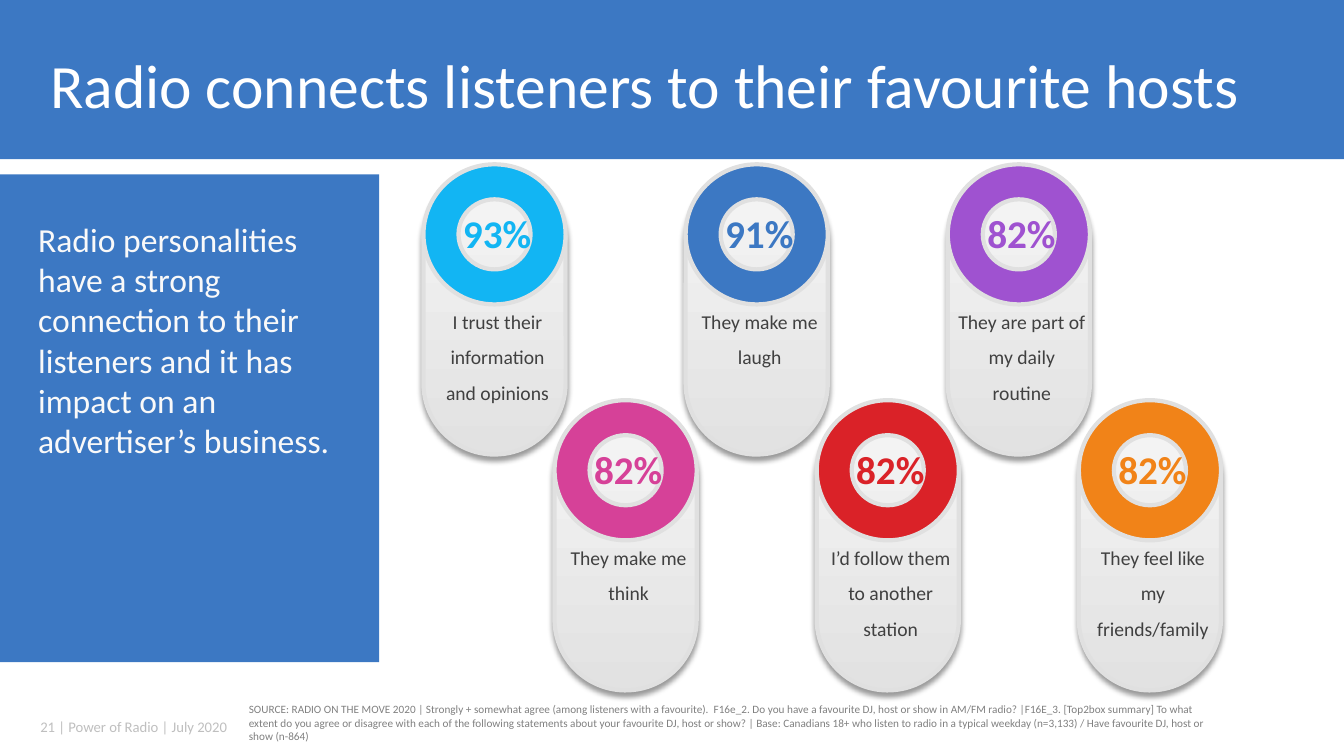
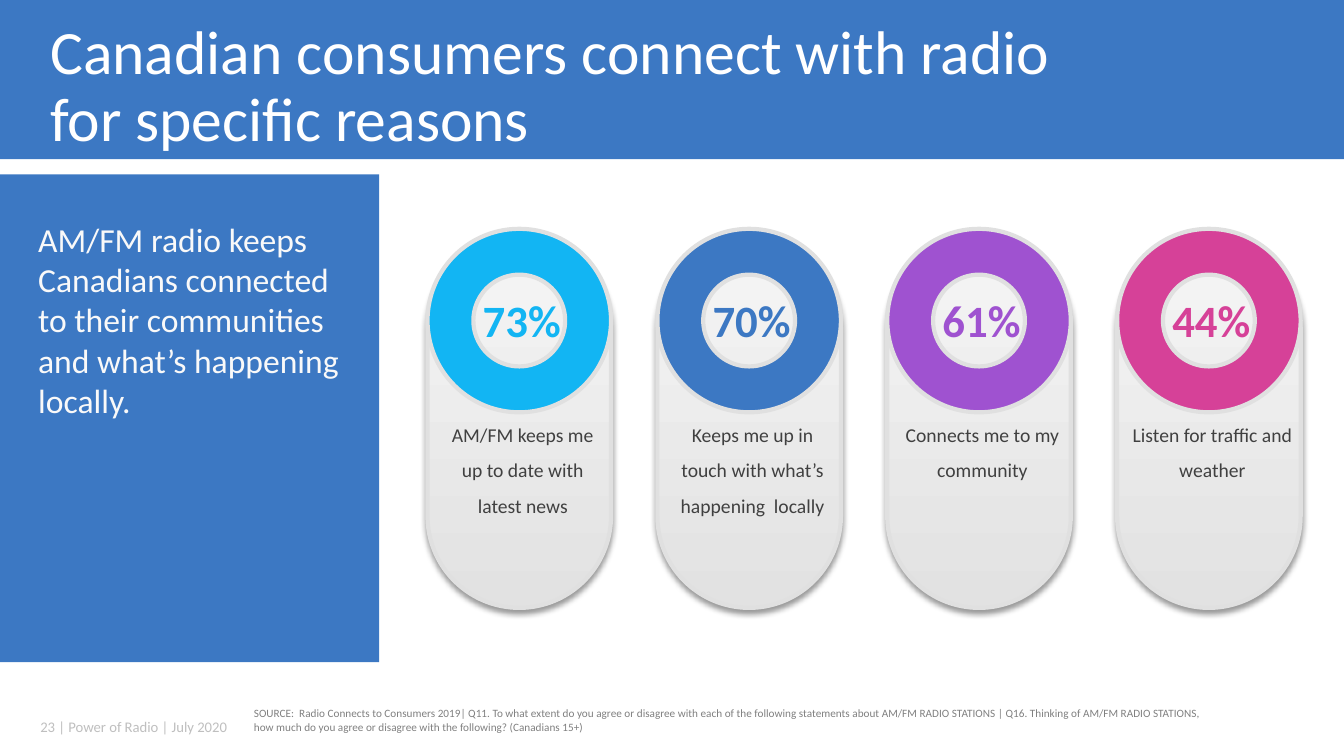
from lxml.etree import SubElement as Sub
from pptx import Presentation
from pptx.dml.color import RGBColor as RGB
from pptx.enum.shapes import MSO_SHAPE as Kind
from pptx.enum.text import MSO_ANCHOR as Anchor, PP_ALIGN as Align
from pptx.oxml.ns import qn
from pptx.util import Pt

PX = 9144  # EMU in one px, at 100 px to the inch
FONT = "Calibri"
HUE = {
    "blue": "3C78C3", "sky": "12B5F3", "pink": "D64198", "red": "DA2228",
    "plum": "9F52D0", "gold": "F18318", "rim": "E0E0E0", "low": "E2E2E2",
    "high": "F5F5F5", "white": "FFFFFF", "pale": "F9F9F9", "ink": "404040",
    "grey": "808080", "mist": "BFBFBF", "black": "000000",
}

DECK = [
    {
        "title": "Radio connects listeners to their favourite hosts",
        "side": "Radio personalities have a strong connection to their listeners "
                "and it has impact on an advertiser’s business.",
        "page": "21 | Power of Radio | July 2020",
        "source": "SOURCE: RADIO ON THE MOVE 2020 | Strongly + somewhat agree (among "
                  "listeners with a favourite).  F16e_2. Do you have a favourite DJ, host "
                  "or show in AM/FM radio? |F16E_3. [Top2box summary] To what extent do "
                  "you agree or disagree with each of the following statements about your "
                  "favourite DJ, host or show? | Base: Canadians 18+ who listen to radio "
                  "in a typical weekday (n=3,133) / Have favourite DJ, host or show (n-864)",
        "source_box": (237, 692, 973, 58),
        # first pill, step to the next, drop of every second pill
        "start": (420, 163), "step": 130, "drop": 234,
        # boxes measured from the pill's corner
        "pill": (0, 5, 141, 283), "ring": (0, 0, 141, 139),
        "share": (39, 45, 68, 47), "label": (10, 133, 127, 102), "size": 28,
        "items": [
            ("93%", "sky", "I trust their information and opinions"),
            ("82%", "pink", "They make me think"),
            ("91%", "blue", "They make me laugh"),
            ("82%", "red", "I’d follow them to another station"),
            ("82%", "plum", "They are part of my daily routine"),
            ("82%", "gold", "They feel like my friends/family"),
        ],
    },
    {
        "title": "Canadian consumers connect with radio\vfor specific reasons",
        "side": "AM/FM radio keeps Canadians connected to their communities "
                "and what’s happening locally.",
        "page": "23 | Power of Radio | July 2020",
        "source": "SOURCE:  Radio Connects to Consumers 2019| Q11. To what extent do you "
                  "agree or disagree with each of the following statements about AM/FM "
                  "RADIO STATIONS | Q16. Thinking of AM/FM RADIO STATIONS,\n"
                  "how much do you agree or disagree with the following? (Canadians 15+)",
        "source_box": (242, 696, 1070, 50),
        "start": (424, 227), "step": 228, "drop": 0,
        "pill": (0, 7, 182, 369), "ring": (0, 0, 182, 182),
        "share": (50, 63, 87, 54), "label": (13, 181, 163, 102), "size": 32,
        "items": [
            ("73%", "sky", "AM/FM keeps me up to date with latest news"),
            ("70%", "blue", "Keeps me up in touch with what’s happening  locally"),
            ("61%", "plum", "Connects me to my community"),
            ("44%", "pink", "Listen for traffic and weather"),
        ],
    },
]


def draw(kind, box, hue, rim=False):
    shape = slide.shapes.add_shape(kind, *[n * PX for n in box])
    shape.shadow.inherit = False
    shape.fill.solid()
    shape.fill.fore_color.rgb = RGB.from_string(HUE[hue])
    if rim:
        shape.line.color.rgb = RGB.from_string(HUE["rim"])
        shape.line.width = Pt(3)
    else:
        shape.line.fill.background()
    return shape


def write(words, box, size, hue, inset=(10, 5), anchor=Anchor.TOP,
          align=Align.LEFT, space=None, bold=False):
    frame = slide.shapes.add_textbox(*[n * PX for n in box]).text_frame
    frame.word_wrap = True
    frame.vertical_anchor = anchor
    frame.margin_left = frame.margin_right = inset[0] * PX
    frame.margin_top = frame.margin_bottom = inset[1] * PX
    frame.text = words
    for para in frame.paragraphs:
        para.alignment = align
        para.line_spacing = space
        para.font.name = FONT
        para.font.size = Pt(size)
        para.font.bold = bold
        para.font.color.rgb = RGB.from_string(HUE[hue])


deck = Presentation()
deck.slide_width, deck.slide_height = 1333 * PX, 750 * PX

for page in DECK:
    slide = deck.slides.add_slide(deck.slide_layouts[6])

    # Title band, side panel and footer
    draw(Kind.RECTANGLE, (0, 0, 1333, 158), "blue")
    write(page["title"], (40, 15, 1250, 145), 44, "white",
          anchor=Anchor.MIDDLE, space=0.9)
    draw(Kind.RECTANGLE, (0, 173, 376, 484), "blue")
    write(page["side"], (28, 212, 318, 252), 24, "pale")
    write(page["page"], (27, 701, 299, 40), 10.5, "mist",
          inset=(13, 7), anchor=Anchor.MIDDLE)
    write(page["source"], page["source_box"], 8, "grey")

    # Pills with a ring, a share and a label
    for i, (share, hue, label) in enumerate(page["items"]):
        left = page["start"][0] + i * page["step"]
        top = page["start"][1] + i % 2 * page["drop"]
        box = {part: (left + page[part][0], top + page[part][1], *page[part][2:])
               for part in ("pill", "ring", "share", "label")}

        pill = draw(Kind.ROUNDED_RECTANGLE, box["pill"], "low", rim=True)
        pill.adjustments[0] = 0.5
        pill.fill.gradient()
        pill.fill.gradient_angle = 90
        for stop, tone in zip(pill.fill.gradient_stops, ("low", "high")):
            stop.color.rgb = RGB.from_string(HUE[tone])
        glow = Sub(pill.element.spPr.find(qn("a:effectLst")), qn("a:outerShdw"),
                   blurRad="50800", dist="38100", dir="5400000", rotWithShape="0")
        tint = Sub(glow, qn("a:srgbClr"), val=HUE["black"])
        Sub(tint, qn("a:alpha"), val="40000")

        draw(Kind.DONUT, box["ring"], hue, rim=True)
        write(share, box["share"], page["size"], hue, inset=(0, 0),
              anchor=Anchor.MIDDLE, align=Align.CENTER, bold=True)
        write(label, box["label"], 14, "ink", inset=(0, 0),
              align=Align.CENTER, space=1.5)

deck.save("out.pptx")
